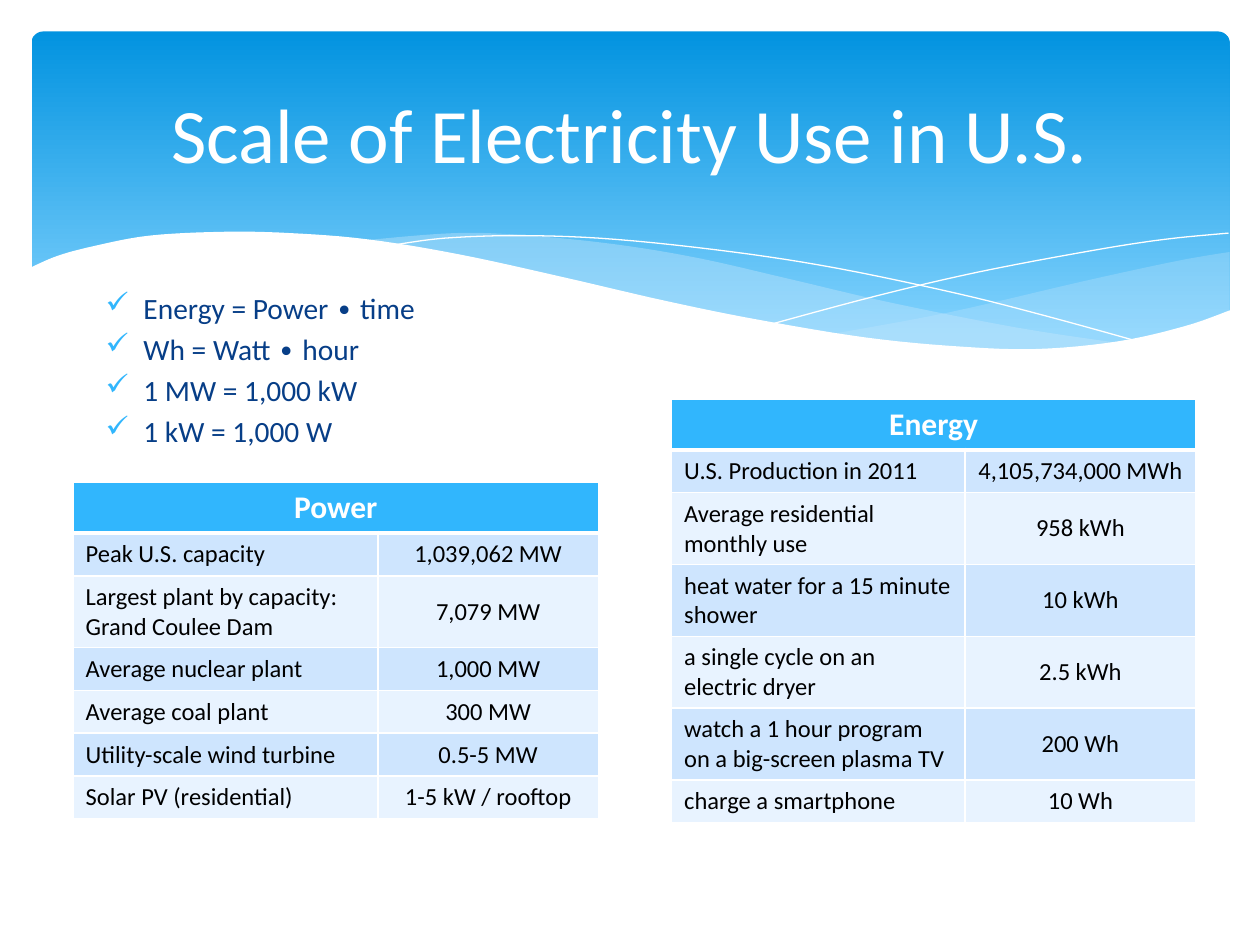
"""Build a slide on the scale of electricity use in the U.S."""
from lxml import etree
from pptx import Presentation, util as u
from pptx.dml.color import RGBColor
from pptx.enum import shapes, text
from pptx.oxml import ns

THEME = dict(
    font="Calibri", white="FFFFFF", black="000000", navy="073E87", sky="31B6FD",
    deep="0293E0", light="83D3FE", mist="C6E7FC", bands=("CEE5FE", "E8F3FF"),
    title=44, body=16.8, head=18, cell=14)

TITLE = "Scale of Electricity Use in U.S."
FACTS = ["Energy = Power ∙ time", "Wh = Watt ∙ hour", "1 MW = 1,000 kW", "1 kW = 1,000 W"]

TABLES = [
    dict(head="Power", left=0.58, top=3.83, cols=(2.42, 1.75), tall={2}, rows=[
        ("Peak U.S. capacity", "1,039,062 MW"),
        ("Largest plant by capacity: Grand Coulee Dam", "7,079 MW"),
        ("Average nuclear plant", "1,000 MW"),
        ("Average coal plant", "300 MW"),
        ("Utility-scale wind turbine", "0.5-5 MW"),
        ("Solar PV (residential)", "1-5 kW / rooftop")]),
    dict(head="Energy", left=5.33, top=3.17, cols=(2.33, 1.83), tall={2, 3, 4, 5}, rows=[
        ("U.S. Production in 2011", "4,105,734,000 MWh"),
        ("Average residential monthly use", "958 kWh"),
        ("heat water for a 15 minute shower", "10 kWh"),
        ("a single cycle on an electric dryer", "2.5 kWh"),
        ("watch a 1 hour program on a big-screen plasma TV", "200 Wh"),
        ("charge a smartphone", "10 Wh")]),
]
HEIGHTS = dict(head=0.39, line=0.34, tall=0.57)

WAVES = [
    dict(fill=THEME["mist"], alpha=29, edges=[
        [(9.76, 2), (9.35, 2.07), (8.61, 2.23), (7.53, 2.48), (6.61, 2.65)],
        [(6.61, 2.65), (7.19, 2.72), (7.69, 2.77), (8.14, 2.78), (8.72, 2.74),
         (9.21, 2.65), (9.76, 2.47)]]),
    dict(fill=THEME["mist"], alpha=40, edges=[
        [(8.93, 2.73), (8.07, 2.6), (7.06, 2.4), (6.29, 2.22), (5.55, 2.05), (4.89, 1.94),
         (4.2, 1.87), (3.61, 1.85), (2.86, 1.91)],
        [(2.86, 1.91), (3.62, 2.03), (4.49, 2.22), (5.66, 2.48), (6.5, 2.64), (7.22, 2.74),
         (7.85, 2.78), (8.38, 2.78), (8.93, 2.73)]]),
    dict(line=THEME["white"], edges=[
        [(3.09, 1.95), (3.53, 1.89), (4.16, 1.87), (4.89, 1.9), (5.82, 2), (6.65, 2.13),
         (7.6, 2.33), (8.31, 2.51), (9.07, 2.72)]]),
    dict(line=THEME["white"], edges=[
        [(6.13, 2.57), (6.95, 2.35), (7.76, 2.16), (8.66, 1.99), (9.24, 1.9), (9.75, 1.85)]]),
    dict(fill=THEME["white"], edges=[
        [(9.77, 2.46), (9.4, 2.59), (8.87, 2.71), (8.23, 2.77), (7.61, 2.75), (6.88, 2.68),
         (6.03, 2.54), (5.29, 2.39), (4.47, 2.2), (3.65, 2.02), (2.92, 1.9), (2.3, 1.85),
         (1.77, 1.84), (1.19, 1.87), (0.76, 1.95), (0.46, 2.03), (0.23, 2.13)],
        [(0.23, 3.29), (9.77, 3.29)]]),
]


def rgb(code):
    return RGBColor.from_string(code)


def add(parent, tag, **attrs):
    return etree.SubElement(parent, ns.qn(tag), attrs)


def write(frame, lines, size, color, bold=False, align="LEFT", gap=0, mark=None):
    frame.word_wrap = True
    for i, line in enumerate(lines):
        para = frame.paragraphs[0] if i == 0 else frame.add_paragraph()
        para.alignment = getattr(text.PP_ALIGN, align)
        if i and gap:
            para.space_before = u.Pt(gap)
        if mark:
            props = para._p.get_or_add_pPr()
            props.set("marL", str(u.Inches(0.3)))
            props.set("indent", str(u.Inches(-0.3)))
            add(add(props, "a:buClr"), "a:srgbClr", val=THEME["sky"])
            add(props, "a:buChar", char=mark)
        run = para.add_run()
        run.text = line
        font = run.font
        font.name, font.size, font.bold = THEME["font"], u.Pt(size), bold
        font.color.rgb = rgb(color)


def smooth(knots, steps=6):
    """Return points on a Catmull-Rom curve through the knots."""
    if len(knots) < 3:
        return knots
    ends = [knots[0], *knots, knots[-1]]
    points = [knots[0]]
    for quad in zip(ends, ends[1:], ends[2:], ends[3:]):
        for step in range(1, steps + 1):
            t = step / steps
            points.append(tuple(
                0.5 * (2 * b + (c - a) * t + (2 * a - 5 * b + 4 * c - d) * t ** 2
                       + (3 * b - a - 3 * c + d) * t ** 3)
                for a, b, c, d in zip(*quad)))
    return points


def draw_wave(slide, edges, fill=None, alpha=None, line=None):
    points = [(u.Inches(x), u.Inches(y)) for edge in edges for x, y in smooth(edge)]
    pen = slide.shapes.build_freeform(*points[0])
    pen.add_line_segments(points[1:], close=bool(fill))
    wave = pen.convert_to_shape()
    wave.shadow.inherit = False
    if fill:
        wave.fill.solid()
        wave.fill.fore_color.rgb = rgb(fill)
        wave.line.fill.background()
    else:
        wave.fill.background()
        wave.line.color.rgb = rgb(line)
        wave.line.width = u.Pt(0)
    if alpha:
        tint = wave._element.spPr.find(".//" + ns.qn("a:srgbClr"))
        add(tint, "a:alpha", val=str(alpha * 1000))


def draw_panel(slide):
    panel = slide.shapes.add_shape(
        shapes.MSO_SHAPE.ROUNDED_RECTANGLE, *map(u.Inches, (0.25, 0.25, 9.51, 2.7)))
    panel.adjustments[0] = 0.034
    panel.shadow.inherit = False
    panel.line.fill.background()
    panel.fill.gradient()
    panel.fill.gradient_angle = 270
    for stop, place, tone in zip(panel.fill.gradient_stops, (0, 0.9), ("deep", "light")):
        stop.position = place
        stop.color.rgb = rgb(THEME[tone])


def dress(cell, fill, base):
    cell.fill.solid()
    cell.fill.fore_color.rgb = rgb(fill)
    cell.vertical_anchor = text.MSO_ANCHOR.MIDDLE
    props = cell._tc.get_or_add_tcPr()
    for i, (side, width) in enumerate(zip("LRTB", (1, 1, 1, base))):
        edge = etree.Element(ns.qn("a:ln" + side), w=str(u.Pt(width)))
        add(add(edge, "a:solidFill"), "a:srgbClr", val=THEME["white"])
        props.insert(i, edge)


def draw_table(slide, head, left, top, cols, tall, rows):
    sizes = [HEIGHTS["head"]] + [
        HEIGHTS["tall" if i in tall else "line"] for i in range(1, len(rows) + 1)]
    grid = slide.shapes.add_table(
        len(sizes), len(cols), *map(u.Inches, (left, top, sum(cols), sum(sizes)))).table
    grid.horz_banding = False
    for col, width in zip(grid.columns, cols):
        col.width = u.Inches(width)
    for row, height in zip(grid.rows, sizes):
        row.height = u.Inches(height)
    for cell in grid.rows[0].cells:
        dress(cell, THEME["sky"], 3)
    grid.cell(0, 0).merge(grid.cell(0, len(cols) - 1))
    write(grid.cell(0, 0).text_frame, [head], THEME["head"], THEME["white"],
          bold=True, align="CENTER")
    for r, row in enumerate(rows):
        for c, (words, align) in enumerate(zip(row, ("LEFT", "CENTER"))):
            cell = grid.cell(r + 1, c)
            dress(cell, THEME["bands"][r % 2], 1)
            write(cell.text_frame, [words], THEME["cell"], THEME["black"], align=align)


def main():
    deck = Presentation()
    deck.slide_width, deck.slide_height = u.Inches(10), u.Inches(7.5)
    slide = deck.slides.add_slide(deck.slide_layouts[6])
    draw_panel(slide)
    for wave in WAVES:
        draw_wave(slide, **wave)
    title = slide.shapes.add_textbox(*map(u.Inches, (0.5, 0.37, 9, 1.37))).text_frame
    title.vertical_anchor = text.MSO_ANCHOR.MIDDLE
    write(title, [TITLE], THEME["title"], THEME["white"], align="CENTER")
    facts = slide.shapes.add_textbox(*map(u.Inches, (0.74, 2.25, 4.18, 1.25))).text_frame
    write(facts, FACTS, THEME["body"], THEME["navy"], gap=3.4, mark="✓")
    for table in TABLES:
        draw_table(slide, **table)
    deck.save("out.pptx")


if __name__ == "__main__":
    main()
